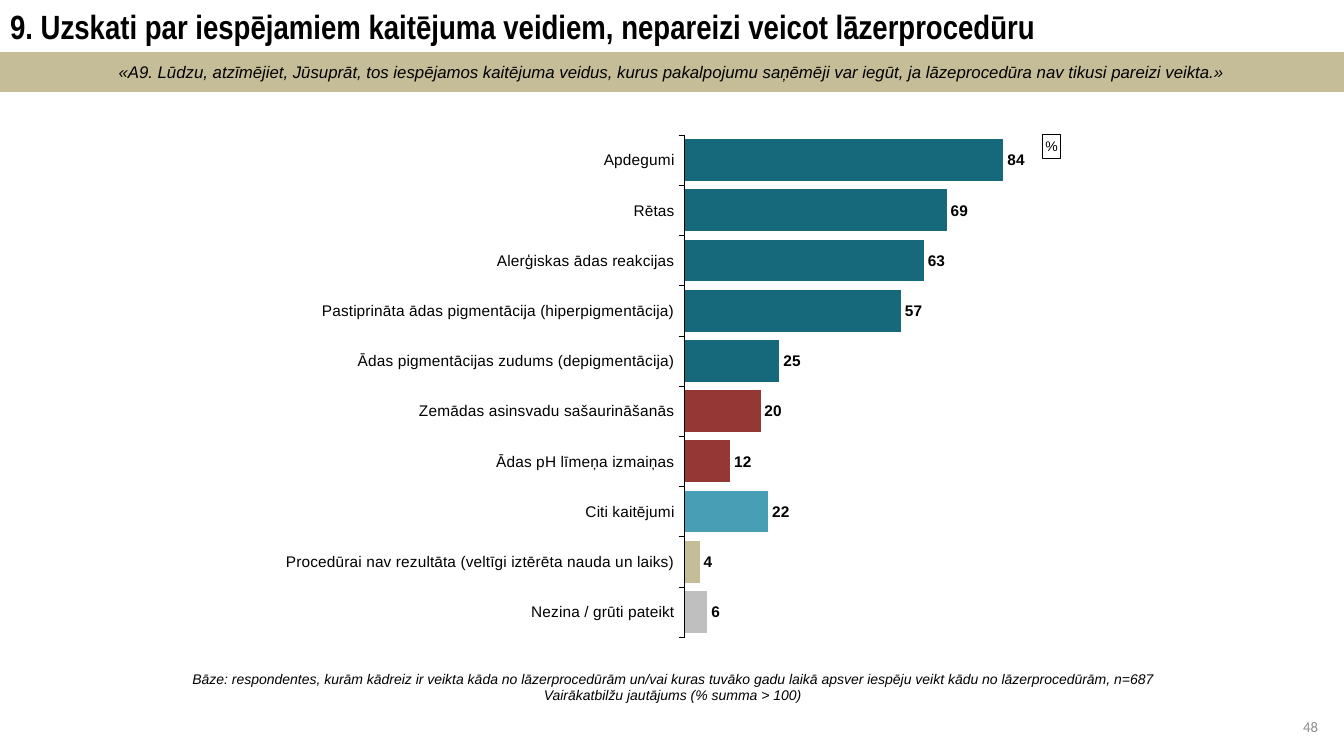
from dataclasses import dataclass

from lxml import etree
from pptx import Presentation
from pptx.chart.chart import Chart
from pptx.chart.data import CategoryChartData
from pptx.dml.color import RGBColor
from pptx.enum.chart import XL_CHART_TYPE, XL_LABEL_POSITION, XL_TICK_LABEL_POSITION, XL_TICK_MARK
from pptx.enum.shapes import MSO_SHAPE
from pptx.enum.text import MSO_ANCHOR, MSO_AUTO_SIZE, PP_ALIGN
from pptx.oxml.ns import qn
from pptx.slide import Slide
from pptx.text.text import TextFrame
from pptx.util import Inches, Pt

BAR_CLUSTERED = XL_CHART_TYPE.BAR_CLUSTERED
OUTSIDE_END = XL_LABEL_POSITION.OUTSIDE_END
LABELS_LOW = XL_TICK_LABEL_POSITION.LOW
TICK_OUT, TICK_NONE = XL_TICK_MARK.OUTSIDE, XL_TICK_MARK.NONE
RECTANGLE = MSO_SHAPE.RECTANGLE
MIDDLE, TOP = MSO_ANCHOR.MIDDLE, MSO_ANCHOR.TOP
NO_AUTOFIT = MSO_AUTO_SIZE.NONE
LEFT, CENTER, RIGHT = PP_ALIGN.LEFT, PP_ALIGN.CENTER, PP_ALIGN.RIGHT

BLACK = RGBColor(0x00, 0x00, 0x00)
PAGE_GRAY = RGBColor(0x8C, 0x8C, 0x8C)
TEAL = RGBColor(0x16, 0x69, 0x7A)
DARK_RED = RGBColor(0x95, 0x37, 0x35)
LIGHT_TEAL = RGBColor(0x48, 0x9F, 0xB5)
SAND = RGBColor(0xC4, 0xBD, 0x97)
SILVER = RGBColor(0xBF, 0xBF, 0xBF)

SLIDE_WIDTH = 13.33


@dataclass(frozen=True)
class TextStyle:
    size: float
    font: str = "Arial"
    color: RGBColor = BLACK
    bold: bool = False
    italic: bool = False
    align: PP_ALIGN = CENTER
    anchor: MSO_ANCHOR = MIDDLE


@dataclass(frozen=True)
class Harm:
    label: str
    percent: int
    color: RGBColor


HARMS = [
    Harm("Apdegumi", 84, TEAL),
    Harm("Rētas", 69, TEAL),
    Harm("Alerģiskas ādas reakcijas", 63, TEAL),
    Harm("Pastiprināta ādas pigmentācija (hiperpigmentācija)", 57, TEAL),
    Harm("Ādas pigmentācijas zudums (depigmentācija)", 25, TEAL),
    Harm("Zemādas asinsvadu sašaurināšanās", 20, DARK_RED),
    Harm("Ādas pH līmeņa izmaiņas", 12, DARK_RED),
    Harm("Citi kaitējumi", 22, LIGHT_TEAL),
    Harm("Procedūrai nav rezultāta (veltīgi iztērēta nauda un laiks)", 4, SAND),
    Harm("Nezina / grūti pateikt", 6, SILVER),
]


def write(frame: TextFrame, text: str, style: TextStyle) -> None:
    frame.text = text
    frame.word_wrap = True
    frame.auto_size = NO_AUTOFIT
    frame.vertical_anchor = style.anchor
    for paragraph in frame.paragraphs:
        paragraph.alignment = style.align
        for run in paragraph.runs:
            run.font.size = Pt(style.size)
            run.font.name = style.font
            run.font.bold = style.bold
            run.font.italic = style.italic
            run.font.color.rgb = style.color


def add_text(slide: Slide, left: float, top: float, width: float, height: float,
             text: str, style: TextStyle) -> None:
    box = slide.shapes.add_textbox(Inches(left), Inches(top), Inches(width), Inches(height))
    write(box.text_frame, text, style)


def add_heading(slide: Slide) -> None:
    heading = slide.shapes.title
    heading.left, heading.top = Inches(0), Inches(0)
    heading.width, heading.height = Inches(SLIDE_WIDTH), Inches(0.52)
    write(heading.text_frame,
          "9. Uzskati par iespējamiem kaitējuma veidiem, nepareizi veicot lāzerprocedūru",
          TextStyle(24, font="Arial Narrow", bold=True, align=LEFT))


def add_question_band(slide: Slide) -> None:
    band = slide.shapes.add_shape(
        RECTANGLE, Inches(0), Inches(0.52), Inches(SLIDE_WIDTH), Inches(0.39))
    band.shadow.inherit = False
    band.fill.solid()
    band.fill.fore_color.rgb = SAND
    band.line.color.rgb = SAND
    band.line.width = Pt(0.75)
    write(band.text_frame,
          "«A9. Lūdzu, atzīmējiet, Jūsuprāt, tos iespējamos kaitējuma veidus, kurus pakalpojumu "
          "saņēmēji var iegūt, ja lāzeprocedūra nav tikusi pareizi veikta.»",
          TextStyle(12, italic=True))


def place(element: etree.ElementBase, **settings: str | float) -> None:
    layout = element.find(qn("c:layout"))
    if layout is None:
        layout = etree.Element(qn("c:layout"))
        element.insert(0, layout)
    manual = etree.SubElement(layout, qn("c:manualLayout"))
    for name, value in settings.items():
        etree.SubElement(manual, qn(f"c:{name}")).set("val", str(value))


def add_unit(chart: Chart) -> None:
    chart.has_title = True
    unit = chart.chart_title
    write_unit = unit.text_frame
    write_unit.text = "%"
    font = write_unit.paragraphs[0].runs[0].font
    font.size, font.name, font.bold = Pt(10), "Arial", False
    font.color.rgb = BLACK
    unit.format.line.color.rgb = BLACK
    unit.format.line.width = Pt(0.75)
    title = chart.chart_title._element if hasattr(unit, "_element") else unit._title
    title.find(qn("c:overlay")).set("val", "1")
    place(title, xMode="edge", yMode="edge", x=0.97, y=0.02)


def add_harm_chart(slide: Slide) -> None:
    answers = CategoryChartData(number_format="0")
    answers.categories = [harm.label for harm in HARMS]
    answers.add_series("Series 1", [harm.percent for harm in HARMS])
    chart = slide.shapes.add_chart(
        BAR_CLUSTERED, Inches(2.02), Inches(1.23), Inches(8.58), Inches(5.21), answers).chart
    chart.has_legend = False
    chart.font.size = Pt(9)
    chart.font.name = "Arial"
    chart.font.color.rgb = BLACK
    add_unit(chart)

    harm_axis = chart.category_axis
    harm_axis.reverse_order = True
    harm_axis.major_tick_mark = TICK_OUT
    harm_axis.minor_tick_mark = TICK_NONE
    harm_axis.tick_label_position = LABELS_LOW
    harm_axis.has_major_gridlines = False
    harm_axis.format.line.color.rgb = BLACK
    harm_axis.format.line.width = Pt(0.25)
    harm_axis.tick_labels.font.size = Pt(11)
    harm_axis.tick_labels.font.name = "Arial"
    harm_axis.tick_labels.font.color.rgb = BLACK

    percent_axis = chart.value_axis
    percent_axis.minimum_scale, percent_axis.maximum_scale = 0, 95
    percent_axis.has_major_gridlines = False
    percent_axis.visible = False

    plot = chart.plots[0]
    plot.gap_width = 20
    plot.vary_by_categories = False
    bars = plot.series[0]
    bars.format.fill.solid()
    bars.format.fill.fore_color.rgb = TEAL
    for index, harm in enumerate(HARMS):
        if harm.color != TEAL:
            fill = bars.points[index].format.fill
            fill.solid()
            fill.fore_color.rgb = harm.color

    labels = bars.data_labels
    labels.show_value = True
    labels.position = OUTSIDE_END
    labels.number_format, labels.number_format_is_linked = "0", False
    labels.font.size, labels.font.name, labels.font.bold = Pt(11), "Arial", True
    labels.font.color.rgb = BLACK

    plot_area = chart._chartSpace.chart.plotArea
    place(plot_area, layoutTarget="inner", xMode="edge", yMode="edge",
          x=0.556, y=0.021, w=0.417, h=0.956)


def main() -> None:
    deck = Presentation()
    deck.slide_width, deck.slide_height = Inches(SLIDE_WIDTH), Inches(7.5)
    slide = deck.slides.add_slide(deck.slide_layouts[5])
    add_heading(slide)
    add_question_band(slide)
    add_text(slide, 1.67, 6.58, 10, 0.47,
             "Bāze: respondentes, kurām kādreiz ir veikta kāda no lāzerprocedūrām un/vai kuras "
             "tuvāko gadu laikā apsver iespēju veikt kādu no lāzerprocedūrām, n=687\n"
             "Vairākatbilžu jautājums (% summa > 100)",
             TextStyle(10, italic=True))
    add_harm_chart(slide)
    add_text(slide, 11.75, 7.01, 1.42, 0.4, "48",
             TextStyle(10.5, font="Calibri", color=PAGE_GRAY, align=RIGHT, anchor=MIDDLE))
    deck.save("out.pptx")


if __name__ == "__main__":
    main()
